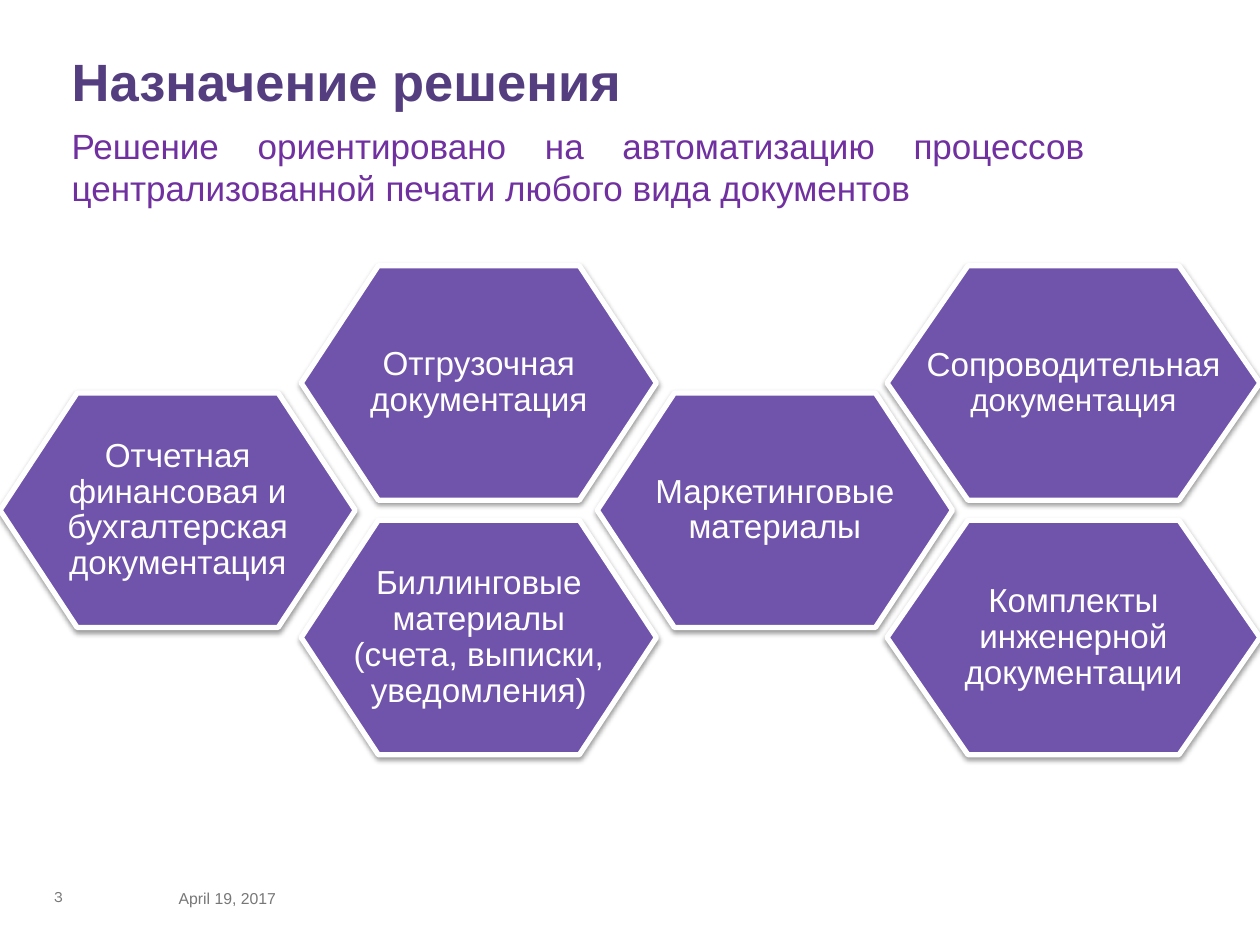
from lxml import etree
from pptx import Presentation
from pptx.dml.color import RGBColor
from pptx.enum import text
from pptx.oxml.ns import qn
from pptx.util import Inches, Pt

ALIGN, ANCHOR = text.PP_ALIGN, text.MSO_ANCHOR
WHITE, VIOLET, GREY = "FFFFFF", "7053AA", "777777"

# words, (left, top, width, height), size, font, colour
TITLE = ("Назначение решения", (0.47, 0.4, 9.15, 1.01), 30, "Arial", "543E80")
LEAD = ("Решение ориентировано на автоматизацию процессов "
        "централизованной печати любого вида документов",
        (0.47, 0.94, 8.55, 0.77), 20, "Arial", "7030A0")
NUMBER = ("3", (0.33, 6.89, 0.59, 0.44), 9, "Karla", GREY)
DATE = ("April 19, 2017", (1.32, 6.93, 2.2, 0.4), 9, "Arial", GREY)

# column: left, width
COLS = [(0, 2.82), (2.39, 2.82), (4.74, 2.82), (7.04, 2.96)]
TOP, STEP, HIGH, CUT = 2.11, 1.01, 1.86, 0.217

# column, half-row, inset, runs as (words, size)
CELLS = [
    (0, 1, 0.3, [("Отчетная финансовая и бухгалтерская документация", 19)]),
    (1, 2, 0.3, [("Биллинговые материалы (счета, выписки, уведомления)", 19)]),
    (1, 0, 0.23, [("Отгрузочная документация", 19)]),
    (2, 1, 0.3, [("Маркетинговые материалы", 19)]),
    (3, 2, 0.3, [("Комплекты инженерной документации", 19)]),
    (3, 0, 0.23, [("Сопроводительная", 19), (" документация", 18)]),
]


def color(code):
    return RGBColor.from_string(code)


def style(run, size, font, code):
    run.font.size, run.font.name = Pt(size), font
    run.font.color.rgb = color(code)


def label(words, place, size, font, code, anchor=ANCHOR.TOP):
    frame = slide.shapes.add_textbox(*map(Inches, place)).text_frame
    frame.word_wrap, frame.vertical_anchor = True, anchor
    frame.text = words
    style(frame.paragraphs[0].runs[0], size, font, code)
    return frame


def shade(shape):
    """Give the shape a soft shadow falling straight down."""
    shape.shadow.inherit = False
    effects = shape._element.spPr.find(qn("a:effectLst"))
    drop = etree.SubElement(effects, qn("a:outerShdw"), blurRad=str(Pt(3.1)),
                            dist=str(Pt(1.6)), dir="5400000", rotWithShape="0")
    black = etree.SubElement(drop, qn("a:srgbClr"), val="000000")
    etree.SubElement(black, qn("a:alpha"), val="38000")


def hexagon(col, row, inset, runs):
    left, wide = COLS[col]
    top = TOP + row * STEP
    right, low, mid = left + wide, top + HIGH, top + HIGH / 2
    near, far = left + CUT * wide, right - CUT * wide
    ends = [(left, mid), (near, top), (far, top),
            (right, mid), (far, low), (near, low)]
    first, *rest = [(Inches(x), Inches(y)) for x, y in ends]
    pen = slide.shapes.build_freeform(*first)
    pen.add_line_segments(rest)
    cell = pen.convert_to_shape()
    cell.fill.solid()
    cell.fill.fore_color.rgb = color(VIOLET)
    cell.line.color.rgb, cell.line.width = color(WHITE), Pt(3)
    shade(cell)

    frame = cell.text_frame
    frame.word_wrap, frame.vertical_anchor = True, ANCHOR.MIDDLE
    frame.margin_left = frame.margin_right = Inches(inset)
    frame.margin_top = frame.margin_bottom = Inches(inset)
    para = frame.paragraphs[0]
    para.alignment, para.line_spacing = ALIGN.CENTER, 0.9
    for words, size in runs:
        run = para.add_run()
        run.text = words
        style(run, size, "Arial", WHITE)


deck = Presentation()
deck.slide_width, deck.slide_height = Inches(10), Inches(7.5)
slide = deck.slides.add_slide(deck.slide_layouts[6])

head = label(*TITLE).paragraphs[0]
head.line_spacing, head.runs[0].font.bold = 0.9, True
label(*NUMBER, ANCHOR.MIDDLE)
lead = label(*LEAD)
lead.margin_right = Inches(0.41)
lead.paragraphs[0].alignment = ALIGN.JUSTIFY
label(*DATE, ANCHOR.MIDDLE)
for cell in CELLS:
    hexagon(*cell)

deck.save("out.pptx")
